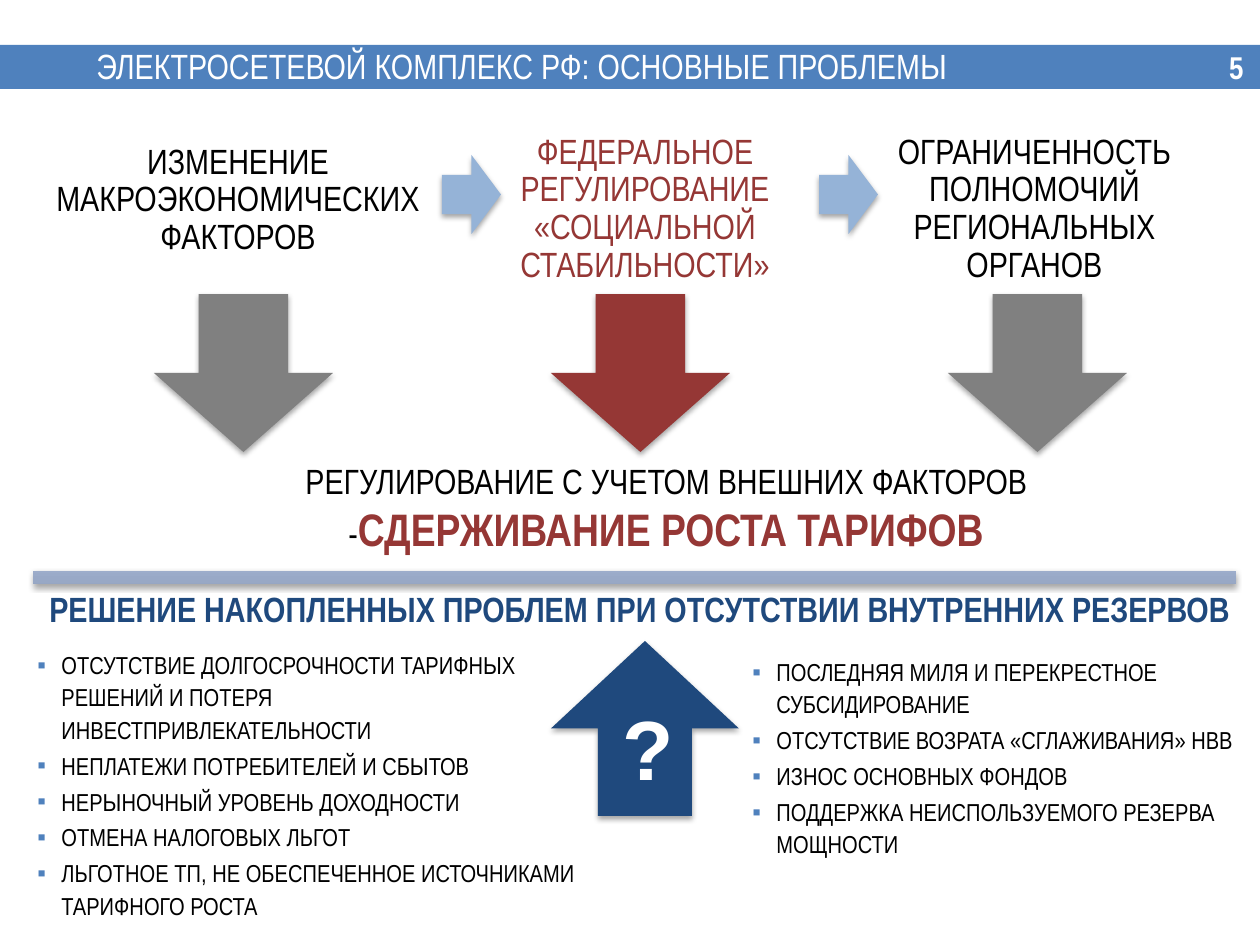
from copy import deepcopy

from lxml import etree
from pptx import Presentation
from pptx import util as u
from pptx.dml.color import RGBColor
from pptx.enum import shapes, text
from pptx.oxml import ns

PX = 914400 / 126
COLORS = {
    "band": "4F81BD", "white": "FFFFFF", "black": "000000", "gray": "808080",
    "red": "953735", "navy": "1F497D", "light": "95B3D7",
}
BAR_STOPS = [(0, "818FA8"), (0.8, "A8B9DA"), (1, "A7BADC")]
SHAPE = shapes.MSO_SHAPE
ALIGN = text.PP_ALIGN
ANCHOR = text.MSO_ANCHOR


def emu(px):
    return u.Emu(round(px * PX))


def add_run(paragraph, words, size=20, color="black", bold=False, font="Arial Narrow"):
    run = paragraph.add_run()
    run.text = words
    run.font.name = font
    run.font.size = u.Pt(size)
    run.font.bold = bold
    run.font.color.rgb = RGBColor.from_string(COLORS[color])


def element(parent, tag, **attributes):
    return etree.SubElement(parent, ns.qn(tag), **attributes)


class Deck:
    def __init__(self):
        self.prs = Presentation()
        self.prs.slide_width, self.prs.slide_height = emu(1260), emu(945)
        self.slide = self.prs.slides.add_slide(self.prs.slide_layouts[6])

    def shape(self, kind, box, color, rotation=0, shadow=True):
        item = self.slide.shapes.add_shape(kind, *map(emu, box))
        item.shadow.inherit = False
        item.line.fill.background()
        item.fill.solid()
        item.fill.fore_color.rgb = RGBColor.from_string(COLORS[color])
        item.rotation = rotation
        if shadow:
            effects = item._element.spPr.find(ns.qn("a:effectLst"))
            outer = element(effects, "a:outerShdw", blurRad="39370", dist="22860",
                            dir="5400000", rotWithShape="0")
            black = element(outer, "a:srgbClr", val=COLORS["black"])
            element(black, "a:alpha", val="35000")
        return item

    def gradient_bar(self, box, thickness):
        bar = self.shape(SHAPE.MATH_MINUS, box, "light")
        bar.adjustments[0] = thickness
        bar.fill.gradient()
        bar.fill.gradient_angle = 90
        stop_list = bar._element.spPr.find(".//" + ns.qn("a:gsLst"))
        stop_list.append(deepcopy(stop_list[-1]))
        for stop, (position, color) in zip(bar.fill.gradient_stops, BAR_STOPS):
            stop.position = position
            stop.color.rgb = RGBColor.from_string(color)

    def textbox(self, box, paragraphs, align=ALIGN.LEFT, anchor=ANCHOR.TOP,
                spacing=None, inset=None, wrap=True, bullet=False):
        """Each paragraph is a list of (words, format) pairs."""
        frame = self.slide.shapes.add_textbox(*map(emu, box)).text_frame
        frame.word_wrap = wrap
        frame.vertical_anchor = anchor
        if inset is not None:
            frame.margin_left = frame.margin_right = emu(inset)
            frame.margin_top = frame.margin_bottom = emu(inset)
        for index, runs in enumerate(paragraphs):
            paragraph = frame.paragraphs[0] if index == 0 else frame.add_paragraph()
            paragraph.alignment = align
            if spacing:
                paragraph.line_spacing = spacing
            if bullet:
                self.bullet(paragraph)
            for words, style in runs:
                add_run(paragraph, words, **style)

    def bullet(self, paragraph):
        paragraph.space_after = u.Pt(2)
        props = paragraph._p.get_or_add_pPr()
        props.set("marL", str(emu(24)))
        props.set("indent", str(-emu(24)))
        element(element(props, "a:buClr"), "a:srgbClr", val=COLORS["band"])
        element(props, "a:buFont", typeface="Arial")
        element(props, "a:buChar", char="▪")

    def caption(self, box, paragraphs, spacing=0.9):
        self.textbox(box, paragraphs, ALIGN.CENTER, ANCHOR.MIDDLE, spacing, inset=20)

    def bullets(self, box, lines):
        self.textbox(box, [[(line, {"size": 14})] for line in lines],
                     spacing=1.1, bullet=True)


def main():
    deck = Deck()

    # Title band and page number
    deck.shape(SHAPE.RECTANGLE, (0, 45, 1260, 44), "band", shadow=False)
    deck.textbox((84, 44, 1062, 48),
                 [[("ЭЛЕКТРОСЕТЕВОЙ КОМПЛЕКС РФ: ОСНОВНЫЕ ПРОБЛЕМЫ", {"color": "white"})]],
                 anchor=ANCHOR.BOTTOM, spacing=0.8)
    deck.textbox((1216, 42, 40, 50),
                 [[("5", {"size": 18, "color": "white", "bold": True})]],
                 align=ALIGN.RIGHT, wrap=False)

    # Three factors, each with an arrow down to the outcome
    factors = [
        ((15, 116, 446, 169), ["ИЗМЕНЕНИЕ МАКРОЭКОНОМИЧЕСКИХ ФАКТОРОВ"], "black", "gray"),
        ((422, 125, 446, 169), ["ФЕДЕРАЛЬНОЕ РЕГУЛИРОВАНИЕ «СОЦИАЛЬНОЙ СТАБИЛЬНОСТИ»"],
         "red", "red"),
        ((868, 125, 333, 169), ["ОГРАНИЧЕННОСТЬ ПОЛНОМОЧИЙ", "РЕГИОНАЛЬНЫХ ОРГАНОВ"],
         "black", "gray"),
    ]
    for column, (box, lines, color, arrow_color) in enumerate(factors):
        deck.shape(SHAPE.DOWN_ARROW, (154 + 397 * column, 294, 179, 158), arrow_color)
        deck.caption(box, [[(line, {"color": color})] for line in lines])
    for left in (432, 809):
        deck.shape(SHAPE.DOWN_ARROW, (left, 165, 79, 59), "light", rotation=270)

    # Outcome
    deck.caption((247, 473, 839, 69), [[
        ("РЕГУЛИРОВАНИЕ С УЧЕТОМ ВНЕШНИХ ФАКТОРОВ -", {}),
        ("СДЕРЖИВАНИЕ РОСТА ТАРИФОВ", {"size": 26, "color": "red", "bold": True}),
    ]], spacing=None)

    # Divider and lower heading
    deck.gradient_bar((-184, 524, 1637, 107), 0.117)
    deck.caption((5, 572, 1270, 79), [[
        ("РЕШЕНИЕ НАКОПЛЕННЫХ ПРОБЛЕМ ПРИ ОТСУТСТВИИ ВНУТРЕННИХ РЕЗЕРВОВ",
         {"color": "navy", "bold": True}),
    ]])

    # Question arrow between the two problem lists
    deck.shape(SHAPE.UP_ARROW, (551, 641, 188, 175), "navy")
    deck.textbox((610, 690, 69, 115), [[
        ("?", {"size": 48, "color": "white", "bold": True, "font": "Arial"}),
    ]])
    deck.bullets((25, 641, 576, 287), [
        "ОТСУТСТВИЕ ДОЛГОСРОЧНОСТИ ТАРИФНЫХ РЕШЕНИЙ И ПОТЕРЯ ИНВЕСТПРИВЛЕКАТЕЛЬНОСТИ",
        "НЕПЛАТЕЖИ ПОТРЕБИТЕЛЕЙ И СБЫТОВ",
        "НЕРЫНОЧНЫЙ УРОВЕНЬ ДОХОДНОСТИ",
        "ОТМЕНА НАЛОГОВЫХ ЛЬГОТ",
        "ЛЬГОТНОЕ ТП, НЕ ОБЕСПЕЧЕННОЕ ИСТОЧНИКАМИ ТАРИФНОГО РОСТА",
    ])
    deck.bullets((740, 648, 546, 219), [
        "ПОСЛЕДНЯЯ МИЛЯ И ПЕРЕКРЕСТНОЕ СУБСИДИРОВАНИЕ",
        "ОТСУТСТВИЕ ВОЗРАТА «СГЛАЖИВАНИЯ» НВВ",
        "ИЗНОС ОСНОВНЫХ ФОНДОВ",
        "ПОДДЕРЖКА НЕИСПОЛЬЗУЕМОГО РЕЗЕРВА МОЩНОСТИ",
    ])

    deck.prs.save("out.pptx")


if __name__ == "__main__":
    main()
